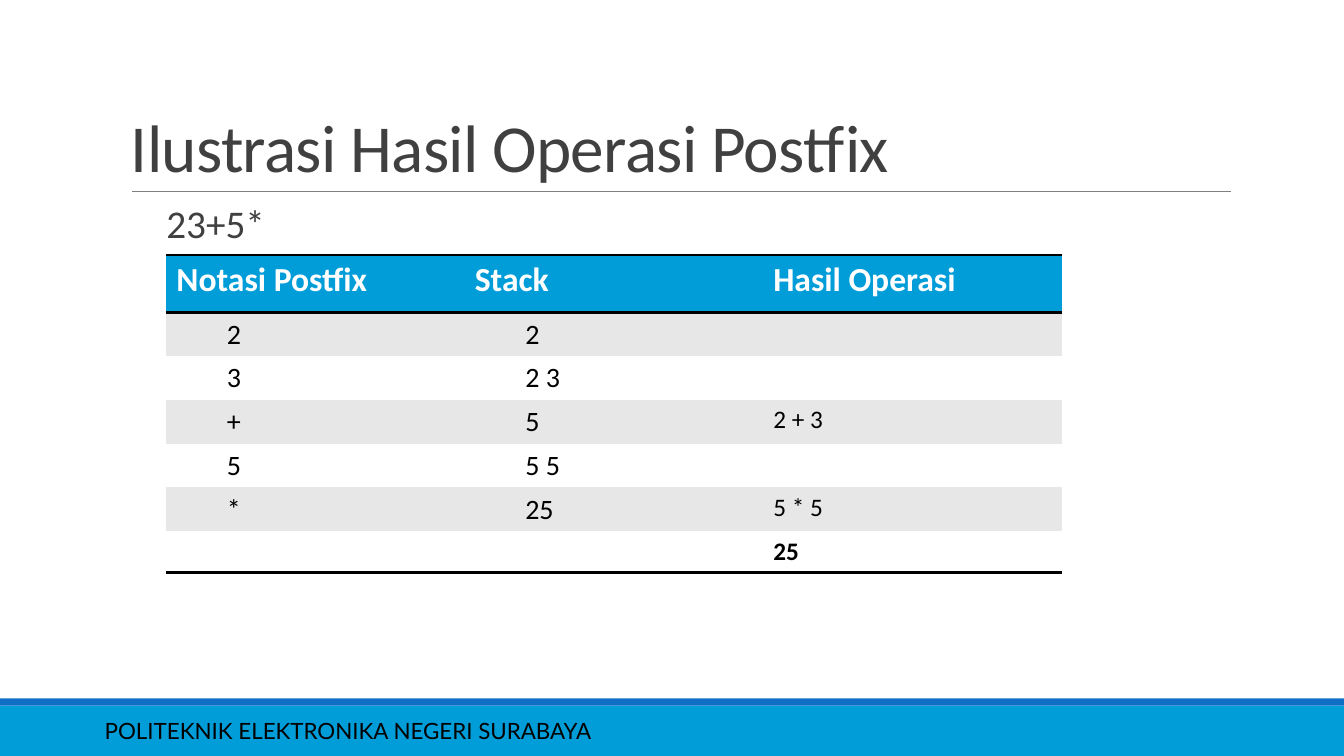
"""Build the slide that traces a postfix evaluation on a stack."""
from dataclasses import dataclass

from lxml import etree
from pptx import Presentation
from pptx import util as u
from pptx.dml.color import RGBColor
from pptx.enum import shapes, text
from pptx.oxml import ns

BLACK = RGBColor(0x00, 0x00, 0x00)
WHITE = RGBColor(0xFF, 0xFF, 0xFF)
DARK = RGBColor(0x40, 0x40, 0x40)
GRAY = RGBColor(0x80, 0x80, 0x80)
BAND = RGBColor(0xE7, 0xE7, 0xE7)
CYAN = RGBColor(0x00, 0x9D, 0xD9)
BLUE = RGBColor(0x0F, 0x6F, 0xC6)
NO_STYLE = "{2D5ABB26-0587-4C30-8999-92F81FD0307C}"
WIDTH = 13.33


@dataclass(frozen=True)
class Bar:
    top: float
    height: float
    color: RGBColor


@dataclass(frozen=True)
class Label:
    text: str
    left: float
    top: float
    width: float
    height: float
    size: float
    color: RGBColor
    anchor: text.MSO_ANCHOR
    font: str = "Calibri"
    inset: float = 0.1
    line_spacing: float = 1.0
    tracking: int = 0


@dataclass(frozen=True)
class Step:
    token: str
    stack: str
    result: str


BARS = [Bar(7, 0.5, CYAN), Bar(6.93, 0.07, BLUE)]
LABELS = [
    Label("POLITEKNIK ELEKTRONIKA NEGERI SURABAYA", 0.94, 7.05, 8.41, 0.4,
          16, BLACK, text.MSO_ANCHOR.MIDDLE, font="Lato"),
    Label("Ilustrasi Hasil Operasi Postfix", 1.2, 0.31, 11, 1.59,
          48, DARK, text.MSO_ANCHOR.BOTTOM, line_spacing=0.85, tracking=-50),
    Label("23+5*", 1.65, 2.02, 4.21, 0.51,
          28, DARK, text.MSO_ANCHOR.TOP, inset=0, line_spacing=0.8),
]
HEADINGS = Step("Notasi Postfix", "Stack", "Hasil Operasi")
STEPS = [
    Step("2", "2", ""),
    Step("3", "2 3", ""),
    Step("+", "5", "2 + 3"),
    Step("5", "5 5", ""),
    Step("*", "25", "5 * 5"),
    Step("", "", "25"),
]


def add_run(p, content: str, size: float, color: RGBColor,
            font: str = "Calibri", bold: bool = False):
    """Append one formatted run to a paragraph."""
    r = p.add_run()
    r.text = content
    r.font.name = font
    r.font.size = u.Pt(size)
    r.font.bold = bold
    r.font.color.rgb = color
    return r


def add_bar(s, bar: Bar) -> None:
    """Draw a full-width footer bar."""
    sp = s.shapes.add_shape(shapes.MSO_SHAPE.RECTANGLE, 0, u.Inches(bar.top),
                            u.Inches(WIDTH), u.Inches(bar.height))
    sp.shadow.inherit = False
    sp.fill.solid()
    sp.fill.fore_color.rgb = bar.color
    sp.line.fill.background()


def add_rule(s) -> None:
    """Draw the thin line below the title."""
    sp = s.shapes.add_connector(shapes.MSO_CONNECTOR.STRAIGHT, u.Inches(1.31),
                                u.Inches(1.9), u.Inches(12.21), u.Inches(1.9))
    sp.line.color.rgb = GRAY
    sp.line.width = u.Pt(0.5)
    etree.SubElement(sp._element.spPr, ns.qn("a:effectLst"))


def add_label(s, label: Label) -> None:
    """Place a single-line text box."""
    sp = s.shapes.add_textbox(u.Inches(label.left), u.Inches(label.top),
                              u.Inches(label.width), u.Inches(label.height))
    tf = sp.text_frame
    tf.word_wrap = True
    tf.vertical_anchor = label.anchor
    tf.margin_left = tf.margin_right = u.Inches(label.inset)
    p = tf.paragraphs[0]
    p.line_spacing = label.line_spacing
    r = add_run(p, label.text, label.size, label.color, label.font)
    if label.tracking:
        r.font._element.set("spc", str(label.tracking))


def add_border(cell, side: str) -> None:
    """Give one side of a cell a black line."""
    ln = etree.Element(ns.qn(f"a:{side}"), w=str(u.Pt(2)))
    fill = etree.SubElement(ln, ns.qn("a:solidFill"))
    etree.SubElement(fill, ns.qn("a:srgbClr"), val=str(BLACK))
    cell._tc.get_or_add_tcPr().insert(0, ln)


def fill_cell(cell, content: str, row: int, col: int) -> None:
    """Fill, border and write one table cell."""
    header = row == 0
    cell.fill.solid()
    cell.fill.fore_color.rgb = CYAN if header else BAND if row % 2 else WHITE
    if header or row == len(STEPS):
        add_border(cell, "lnB")
    if header:
        add_border(cell, "lnT")
    if not content:
        return
    p = cell.text_frame.paragraphs[0]
    if header:
        add_run(p, content, 24, WHITE, bold=True)
    elif col == 2:
        add_run(p, content, 18, BLACK, bold=row == len(STEPS))
    else:
        p.level = 1
        pPr = p._p.get_or_add_pPr()
        pPr.set("marL", str(u.Inches(0.5)))
        pPr.set("indent", "0")
        add_run(p, content, 20, BLACK)


def add_trace_table(s) -> None:
    """Add the table of tokens, stack contents and results."""
    rows = [HEADINGS, *STEPS]
    frame = s.shapes.add_table(len(rows), 3, u.Inches(1.65), u.Inches(2.53),
                               u.Inches(8.88), u.Inches(3.03))
    table = frame.table
    table.horz_banding = False
    table._tbl.tblPr.find(ns.qn("a:tableStyleId")).text = NO_STYLE
    for column in table.columns:
        column.width = u.Inches(2.96)
    for i, step in enumerate(rows):
        table.rows[i].height = u.Inches(0.41 if i else 0.57)
        for j, content in enumerate((step.token, step.stack, step.result)):
            fill_cell(table.cell(i, j), content, i, j)


def main() -> None:
    """Assemble and save the presentation."""
    prs = Presentation()
    prs.slide_width = u.Inches(WIDTH)
    prs.slide_height = u.Inches(7.5)
    s = prs.slides.add_slide(prs.slide_layouts[6])
    for bar in BARS:
        add_bar(s, bar)
    add_rule(s)
    for label in LABELS:
        add_label(s, label)
    add_trace_table(s)
    prs.save("out.pptx")


if __name__ == "__main__":
    main()
